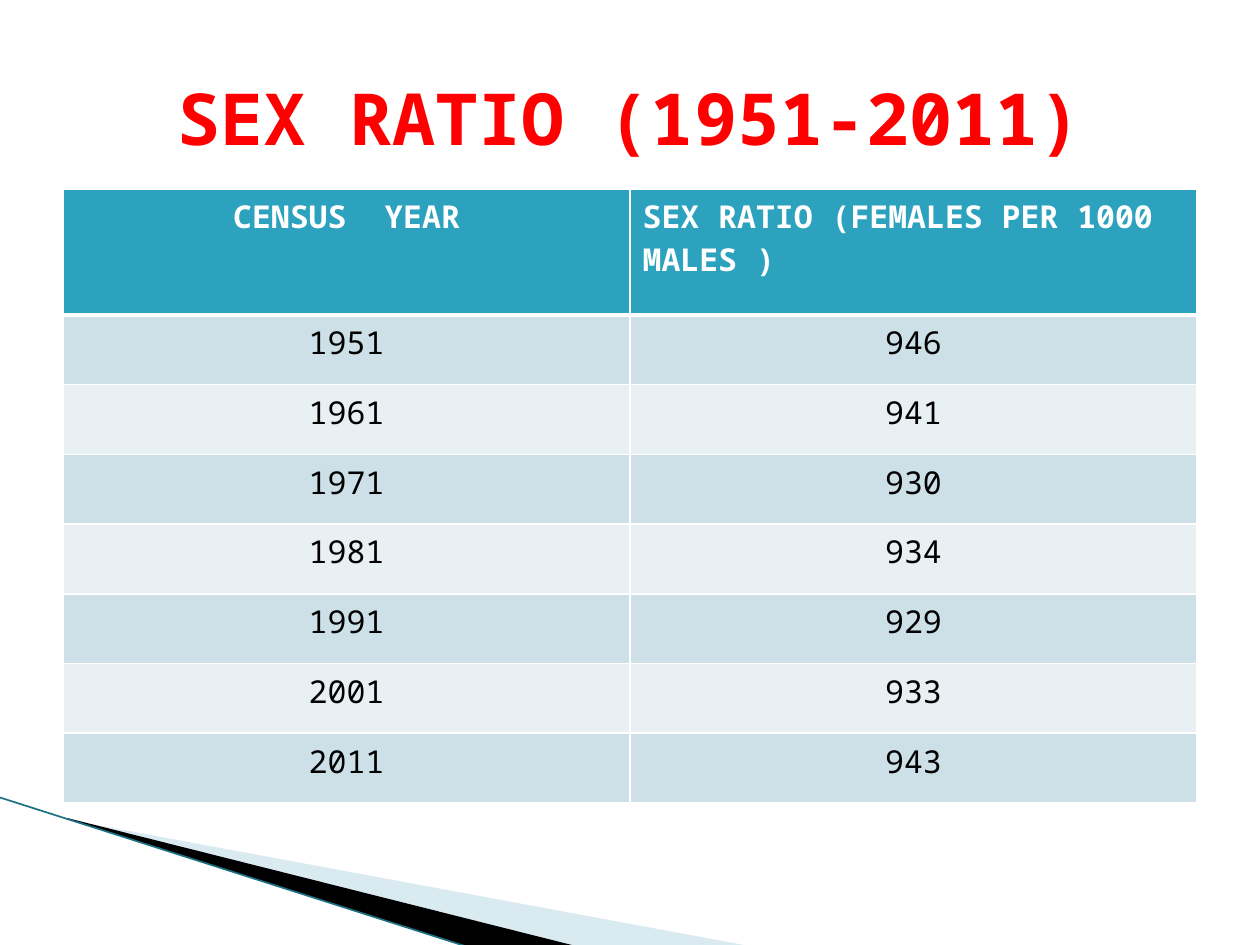
from lxml import etree
from pptx import Presentation
from pptx import util as u
from pptx.dml.color import RGBColor
from pptx.enum import shapes, text
from pptx.oxml import ns

RED = RGBColor(0xFF, 0x00, 0x00)
WHITE = RGBColor(0xFF, 0xFF, 0xFF)
BLACK = RGBColor(0x00, 0x00, 0x00)
TEAL = RGBColor(0x2D, 0xA2, 0xBF)
DARK_TEAL = RGBColor(0x1B, 0x70, 0x84)
PALE_BLUE = RGBColor(0xA0, 0xCB, 0xDC)
BANDS = (RGBColor(0xCD, 0xE0, 0xE8), RGBColor(0xE8, 0xF0, 0xF4))

HEADER = ("CENSUS  YEAR", "SEX RATIO (FEMALES PER 1000 MALES )")
SEX_RATIOS = {
    1951: 946, 1961: 941, 1971: 930, 1981: 934,
    1991: 929, 2001: 933, 2011: 943,
}


class SlideBuilder:
    font_name = "Noto Sans Mono"
    title_size = 41
    table_size = 18

    def __init__(self, slide):
        self.slide = slide

    def format_paragraph(self, paragraph, size, color, bold, alignment):
        paragraph.alignment = alignment
        font = paragraph.font
        font.name, font.size, font.bold = self.font_name, u.Pt(size), bold
        font.color.rgb = color

    def place(self, shape, left, top, width, height):
        shape.left, shape.top = u.Pt(left), u.Pt(top)
        shape.width, shape.height = u.Pt(width), u.Pt(height)

    def title(self, wording, *frame):
        shape = self.slide.shapes.title
        self.place(shape, *frame)
        text_frame = shape.text_frame
        text_frame.text = wording
        text_frame.vertical_anchor = text.MSO_ANCHOR.MIDDLE
        self.format_paragraph(text_frame.paragraphs[0], self.title_size, RED, True,
                              text.PP_ALIGN.CENTER)

    def wedge(self, points, frame, color, opacity=100):
        corners = [(u.Pt(x), u.Pt(y)) for x, y in points]
        builder = self.slide.shapes.build_freeform(*corners[0])
        builder.add_line_segments(corners[1:], close=True)
        shape = builder.convert_to_shape()
        self.place(shape, *frame)
        outline = shape._element.spPr.find(".//" + ns.qn("a:path"))
        outline.set("w", str(shape.width))
        outline.set("h", str(shape.height))
        for point, (x, y) in zip(outline.iter(ns.qn("a:pt")), corners):
            point.set("x", str(x - shape.left))
            point.set("y", str(y - shape.top))
        shape.shadow.inherit = False
        shape.line.fill.background()
        shape.fill.solid()
        shape.fill.fore_color.rgb = color
        if opacity < 100:
            fill_color = shape._element.spPr.find(".//" + ns.qn("a:srgbClr"))
            etree.SubElement(fill_color, ns.qn("a:alpha"), val=str(opacity * 1000))

    def line(self, start, end, color, width):
        ends = [u.Pt(value) for value in (*start, *end)]
        connector = self.slide.shapes.add_connector(shapes.MSO_CONNECTOR.STRAIGHT, *ends)
        connector.line.color.rgb = color
        connector.line.width = u.Pt(width)
        etree.SubElement(connector._element.spPr, ns.qn("a:effectLst"))

    def borders(self, cell, widths):
        properties = cell._tc.get_or_add_tcPr()
        for side, width in zip("LRTB", widths):
            border = etree.SubElement(properties, ns.qn("a:ln" + side), w=str(u.Pt(width)))
            fill = etree.SubElement(border, ns.qn("a:solidFill"))
            etree.SubElement(fill, ns.qn("a:srgbClr"), val=str(WHITE))

    def cell(self, cell, wording, fill, color, bold, alignment, widths):
        self.borders(cell, widths)
        cell.fill.solid()
        cell.fill.fore_color.rgb = fill
        cell.text = wording
        self.format_paragraph(cell.text_frame.paragraphs[0], self.table_size,
                              color, bold, alignment)

    def table(self, header, records, left, top, width, header_height, row_height):
        height = header_height + row_height * len(records)
        table = self.slide.shapes.add_table(
            len(records) + 1, len(header),
            u.Pt(left), u.Pt(top), u.Pt(width), u.Pt(height)).table
        for index, row in enumerate(table.rows):
            row.height = u.Pt(row_height if index else header_height)
        alignments = (text.PP_ALIGN.CENTER, text.PP_ALIGN.LEFT)
        for column, wording in enumerate(header):
            self.cell(table.cell(0, column), wording, TEAL, WHITE, True,
                      alignments[column], (1, 1, 1, 3))
        for index, record in enumerate(records):
            top_border = 1 if index else 3
            for column, value in enumerate(record):
                self.cell(table.cell(index + 1, column), str(value), BANDS[index % 2],
                          BLACK, False, text.PP_ALIGN.CENTER, (1, 1, top_border, 1))


def main():
    presentation = Presentation()
    presentation.slide_width, presentation.slide_height = u.Pt(720), u.Pt(540)
    slide = presentation.slides.add_slide(presentation.slide_layouts[5])
    builder = SlideBuilder(slide)
    builder.wedge([(39.3, 468.5), (428.3, 540.6), (328.2, 540.6), (39.4, 468.1)],
                  (56.4, 393.9, 299.4, 113.6), PALE_BLUE, 40)
    builder.wedge([(38.3, 467.4), (329.2, 540.6), (268, 541.2), (38.6, 467.8)],
                  (-4.2, 455.6, 299.4, 66.2), BLACK)
    builder.line((-0.7, 455.5), (267, 541), DARK_TEAL, 0.95)
    builder.table(HEADER, list(SEX_RATIOS.items()), 36, 108, 648, 72, 39.84)
    builder.title("SEX RATIO (1951-2011)", 36, 21.6, 648, 90)
    presentation.save("out.pptx")


if __name__ == "__main__":
    main()
